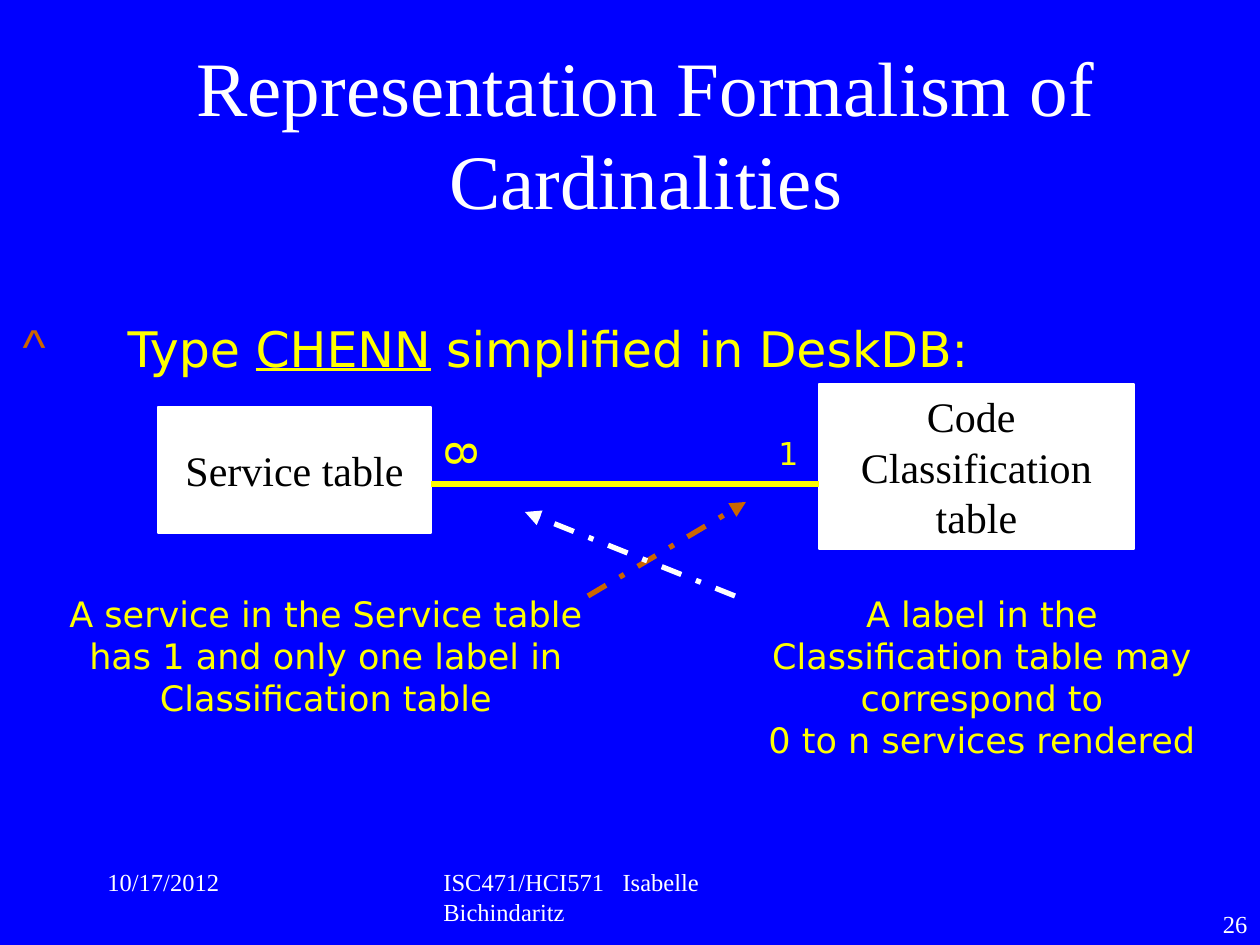
from lxml.etree import SubElement
from pptx import Presentation
from pptx.dml.color import RGBColor
from pptx.enum.dml import MSO_LINE
from pptx.enum.shapes import MSO_CONNECTOR, MSO_SHAPE
from pptx.enum.text import MSO_ANCHOR, MSO_AUTO_SIZE, PP_ALIGN
from pptx.oxml.ns import qn
from pptx.util import Inches, Pt

BLUE = RGBColor(0x00, 0x00, 0xFF)
WHITE = RGBColor(0xFF, 0xFF, 0xFF)
BLACK = RGBColor(0x00, 0x00, 0x00)
YELLOW = RGBColor(0xFF, 0xFF, 0x00)
ORANGE = RGBColor(0xCC, 0x66, 0x00)
SERIF = "Times New Roman"
SANS = "DejaVu Sans"
SCALE = Inches(1) / 126


def emu(*px):
    return [round(n * SCALE) for n in px]


def write(shape, text, font=SERIF, size=14, color=WHITE, align=PP_ALIGN.LEFT,
          anchor=MSO_ANCHOR.TOP, wrap=True, gap=0, under=None):
    """Fill a shape: newline parts paragraphs, \\v breaks a line; under is underlined."""
    frame = shape.text_frame
    frame.word_wrap = wrap
    frame.auto_size = MSO_AUTO_SIZE.NONE
    frame.vertical_anchor = anchor
    for i, line in enumerate(text.split("\n")):
        para = frame.add_paragraph() if i else frame.paragraphs[0]
        para.alignment = align
        para.space_before = para.space_after = Pt(gap)
        for j, part in enumerate(line.split("\v")):
            if j:
                para.add_line_break()
            left, mid, right = part.partition(under) if under else (part, "", "")
            for piece in filter(None, (left, mid, right)):
                run = para.add_run()
                run.text = piece
                run.font.name = font
                run.font.size = Pt(size)
                run.font.color.rgb = color
                if piece == under:
                    run.font.underline = True


class Board:
    def __init__(self, deck):
        self.slide = deck.slides.add_slide(deck.slide_layouts[1])
        fill = self.slide.background.fill
        fill.solid()
        fill.fore_color.rgb = BLUE

    def place(self, shape, box):
        shape.left, shape.top, shape.width, shape.height = emu(*box)
        return shape

    def title(self, text, box):
        shape = self.place(self.slide.shapes.title, box)
        write(shape, text, size=44, align=PP_ALIGN.CENTER, anchor=MSO_ANCHOR.BOTTOM)

    def bullet(self, text, box, indent, **style):
        shape = self.place(self.slide.placeholders[1], box)
        write(shape, text, font=SANS, size=28, color=YELLOW, gap=5, **style)
        for para in shape.text_frame.paragraphs:
            props = para._p.get_or_add_pPr()
            step, = emu(indent)
            props.set("marL", str(step))
            props.set("indent", str(-step))
            tint = SubElement(props, qn("a:buClr"))
            SubElement(tint, qn("a:srgbClr")).set("val", str(ORANGE))
            SubElement(props, qn("a:buChar")).set("char", "^")

    def label(self, text, box, turn=0, **style):
        shape = self.slide.shapes.add_textbox(*emu(*box))
        shape.rotation = turn
        write(shape, text, **style)

    def note(self, text, box, size=20, align=PP_ALIGN.CENTER, turn=0):
        self.label(text, box, turn, font=SANS, size=size, color=YELLOW,
                   align=align, gap=5)

    def table(self, text, box):
        """Draw a box that stands for a database table."""
        shape = self.slide.shapes.add_shape(MSO_SHAPE.RECTANGLE, *emu(*box))
        shape.shadow.inherit = False
        shape.fill.solid()
        shape.fill.fore_color.rgb = WHITE
        shape.line.color.rgb = WHITE
        shape.line.width = Pt(0.75)
        write(shape, text, size=24, color=BLACK, align=PP_ALIGN.CENTER,
              anchor=MSO_ANCHOR.MIDDLE, wrap=False)

    def line(self, start, end, color, arrow=False):
        """Draw a solid line, or a dash-dot one with an arrowhead."""
        link = self.slide.shapes.add_connector(
            MSO_CONNECTOR.STRAIGHT, *emu(*start, *end))
        link.line.color.rgb = color
        link.line.width = Pt(3)
        if arrow:
            link.line.dash_style = MSO_LINE.DASH_DOT
            SubElement(link.line._get_or_add_ln(), qn("a:tailEnd")).set("type", "triangle")
        SubElement(link._element.spPr, qn("a:effectLst"))


def main():
    deck = Presentation()
    deck.slide_width, deck.slide_height = emu(1260, 945)
    board = Board(deck)

    board.title("Representation Formalism of Cardinalities", (32, 42, 1228, 189))
    board.bullet("Type CHENN simplified in DeskDB:", (10, 312, 1239, 72), 105,
                 under="CHENN")

    board.table("Service table", (158, 407, 273, 126))
    board.table("Code \nClassification\vtable", (819, 384, 315, 165))
    board.line((431, 484), (819, 484), YELLOW)
    board.note("8", (436, 423, 53, 63), size=24, align=PP_ALIGN.LEFT, turn=90)
    board.note("1", (766, 428, 42, 50), size=18, align=PP_ALIGN.LEFT)

    board.note("A service in the Service table has 1 and only one label in "
               "Classification table", (53, 586, 546, 140))
    board.note("A label in the Classification table may correspond to\v"
               "0 to n services rendered", (735, 586, 494, 183))
    board.line((588, 596), (746, 502), ORANGE, arrow=True)
    board.line((735, 596), (525, 512), WHITE, arrow=True)

    board.label("10/17/2012", (95, 861, 262, 63))
    board.label("ISC471/HCI571   Isabelle Bichindaritz", (431, 861, 399, 63))
    board.label("26", (998, 903, 262, 42), align=PP_ALIGN.RIGHT)
    deck.save("out.pptx")


if __name__ == "__main__":
    main()
